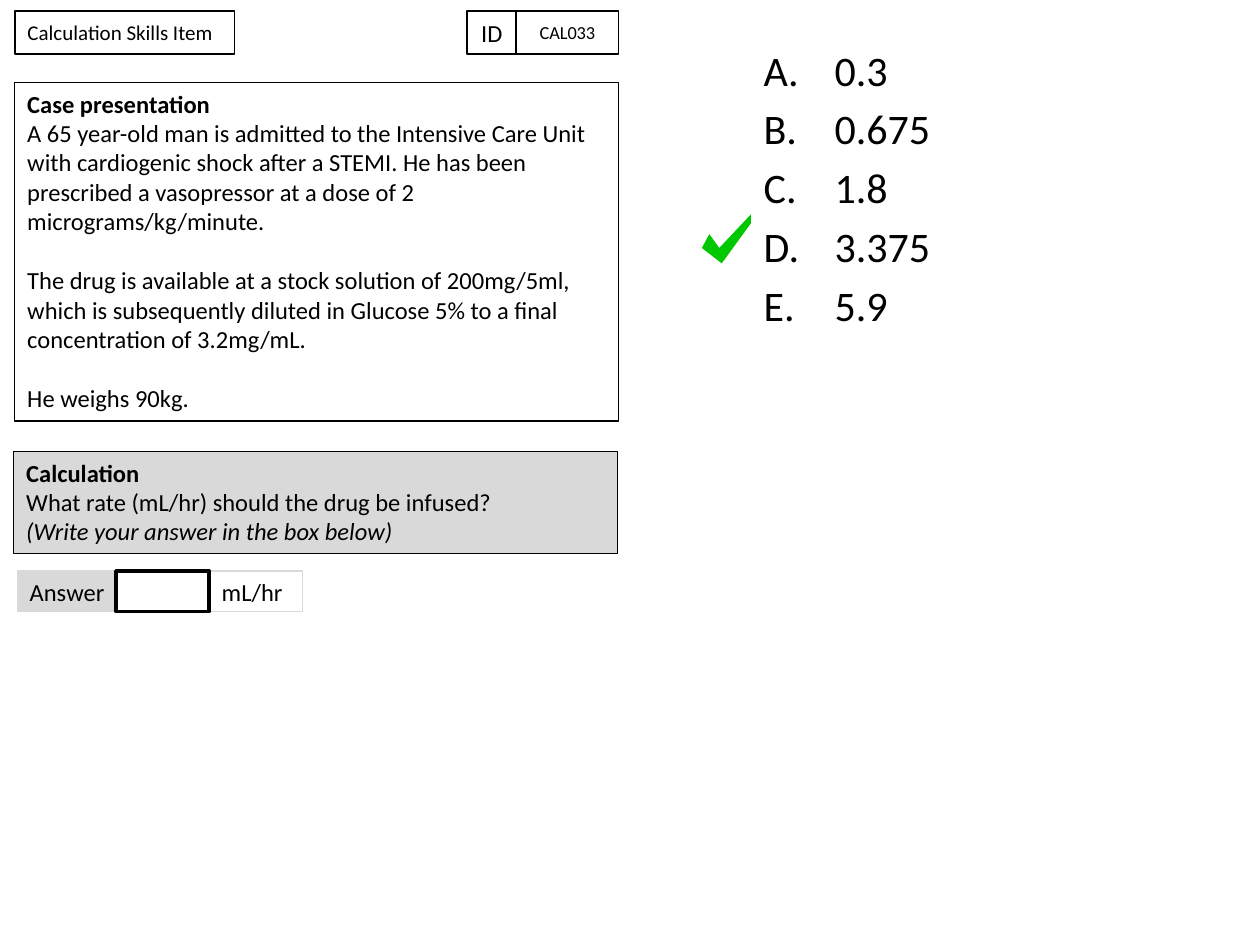
from lxml.etree import SubElement
from pptx import Presentation
from pptx.dml.color import RGBColor
from pptx.enum.shapes import MSO_SHAPE
from pptx.enum.text import MSO_ANCHOR, MSO_AUTO_SIZE, PP_ALIGN
from pptx.oxml.ns import qn
from pptx.util import Cm, Pt

COLORS = {
    "ink": "000000",
    "paper": "FFFFFF",
    "panel": "D9D9D9",
    "correct": "00C800",
}
FONT = "Calibri"


def color(name):
    return RGBColor.from_string(COLORS[name])


def add_run(paragraph, text, size, bold=False, italic=False):
    run = paragraph.add_run()
    run.text = text
    run.font.name = FONT
    run.font.size = Pt(size)
    run.font.bold = bold
    run.font.italic = italic
    run.font.color.rgb = color("ink")


presentation = Presentation()
presentation.slide_width = Cm(25.4)
presentation.slide_height = Cm(19.05)
slide = presentation.slides.add_slide(presentation.slide_layouts[1])

options = slide.placeholders[1]
options.left, options.top = Cm(15.14), Cm(0.76)
options.width, options.height = Cm(8.41), Cm(16.26)
options.text_frame.auto_size = MSO_AUTO_SIZE.NONE
for index, value in enumerate(["0.3", "0.675", "1.8", "3.375", "5.9"]):
    frame = options.text_frame
    option = frame.paragraphs[0] if index == 0 else frame.add_paragraph()
    properties = option._p.get_or_add_pPr()
    properties.set("marL", str(Cm(1.43)))
    properties.set("indent", str(-Cm(1.43)))
    SubElement(properties, qn("a:buFont"), typeface="+mj-lt")
    SubElement(properties, qn("a:buAutoNum"), type="alphaUcPeriod")
    if index == 0:
        option.space_before = Pt(0)
    add_run(option, value, 24)

heading = slide.shapes.title
heading.left, heading.top, heading.width, heading.height = Cm(0.3), Cm(0.22), Cm(4.43), Cm(0.87)
heading.fill.solid()
heading.fill.fore_color.rgb = color("paper")
heading.line.color.rgb = color("ink")
heading.line.width = Pt(1)
heading.text_frame.auto_size = MSO_AUTO_SIZE.NONE
heading.text_frame.vertical_anchor = MSO_ANCHOR.MIDDLE
heading_line = heading.text_frame.paragraphs[0]
heading_line.alignment = PP_ALIGN.LEFT
add_run(heading_line, "Calculation Skills Item", 12)

labels = [
    ("CAL033", 10.41, 0.22, 2.06, 0.87, "paper", "ink", 1, 10.5, PP_ALIGN.CENTER),
    ("ID", 9.42, 0.22, 0.99, 0.87, None, "ink", 1, 14, PP_ALIGN.CENTER),
    ("Answer", 0.35, 11.51, 2.21, 0.82, "panel", "panel", 0.75, 14, PP_ALIGN.LEFT),
    ("mL/hr", 4.22, 11.51, 1.88, 0.82, None, "panel", 0.75, 14, PP_ALIGN.LEFT),
    ("", 2.34, 11.51, 1.88, 0.82, "paper", "ink", 2, 14, PP_ALIGN.LEFT),
]
case_text = [
    ("Case presentation", True, False, 0),
    ("A 65 year-old man is admitted to the Intensive Care Unit with cardiogenic shock "
     "after a STEMI. He has been prescribed a vasopressor at a dose of 2 "
     "micrograms/kg/minute.", False, False, 0),
    ("The drug is available at a stock solution of 200mg/5ml, which is subsequently "
     "diluted in Glucose 5% to a final concentration of 3.2mg/mL.", False, False, 17),
    ("He weighs 90kg.", False, False, 17),
]
question_text = [
    ("Calculation", True, False, 0),
    ("What rate (mL/hr) should the drug be infused?", False, False, 0),
    ("(Write your answer in the box below)", False, True, 0),
]
panels = [
    (case_text, 0.3, 1.66, 12.17, 6.83, None),
    (question_text, 0.28, 9.1, 12.17, 2.06, "panel"),
]
boxes = [
    (content, left, top, width, height, fill, "ink", 0.75, 14, PP_ALIGN.LEFT, MSO_ANCHOR.TOP)
    for content, left, top, width, height, fill in panels
] + [
    ([(label, False, False, 0)] if label else [], *layout, MSO_ANCHOR.MIDDLE)
    for label, *layout in labels
]
for content, left, top, width, height, fill, border, weight, size, align, anchor in boxes:
    box = slide.shapes.add_shape(
        MSO_SHAPE.RECTANGLE, Cm(left), Cm(top), Cm(width), Cm(height))
    box.shadow.inherit = False
    if fill:
        box.fill.solid()
        box.fill.fore_color.rgb = color(fill)
    else:
        box.fill.background()
    box.line.color.rgb = color(border)
    box.line.width = Pt(weight)
    frame = box.text_frame
    frame.word_wrap = True
    frame.vertical_anchor = anchor
    for index, (text, bold, italic, gap) in enumerate(content):
        paragraph = frame.paragraphs[0] if index == 0 else frame.add_paragraph()
        paragraph.alignment = align
        if gap:
            paragraph.space_before = Pt(gap)
        add_run(paragraph, text, size, bold, italic)

tick_points = [
    (14.3, 4.72), (14.15, 5), (14.55, 5.31),
    (15.14, 4.5), (15.14, 4.32), (14.5, 5),
]
tick_corners = [(Cm(x), Cm(y)) for x, y in tick_points]
tick_outline = slide.shapes.build_freeform(*tick_corners[0])
tick_outline.add_line_segments(tick_corners[1:], close=True)
tick = tick_outline.convert_to_shape()
tick.shadow.inherit = False
tick.fill.solid()
tick.fill.fore_color.rgb = color("correct")
tick.line.fill.background()

presentation.save("out.pptx")
